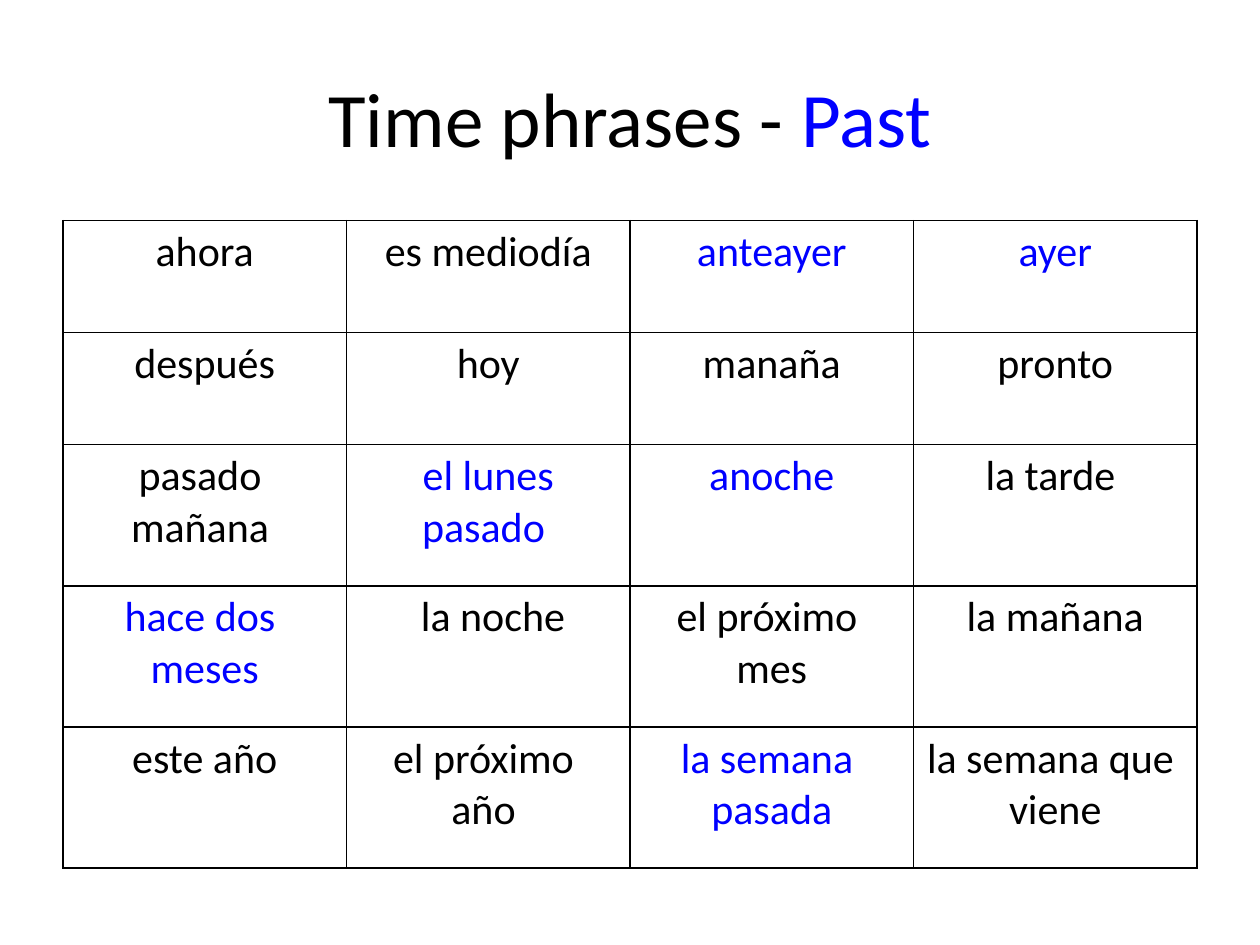
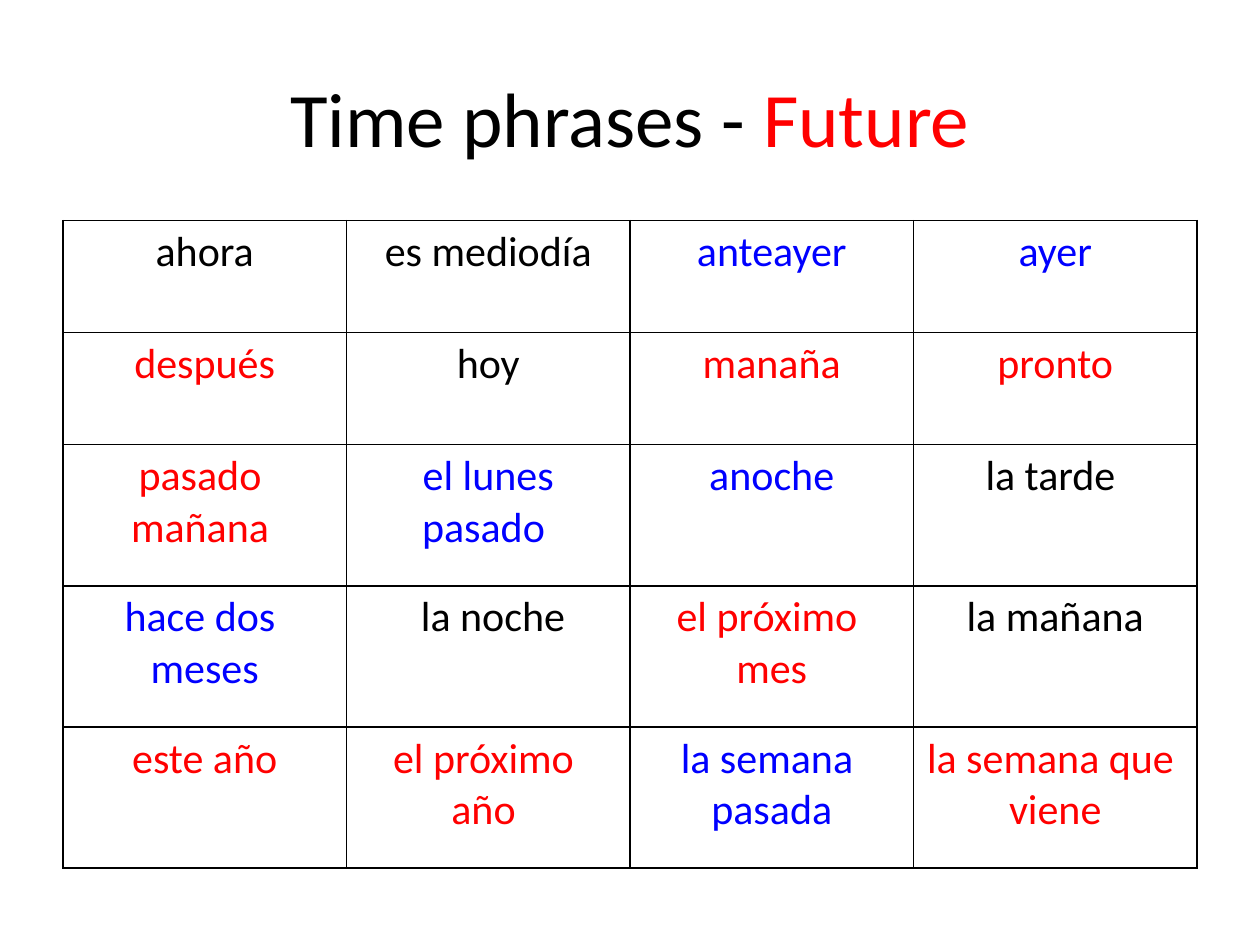
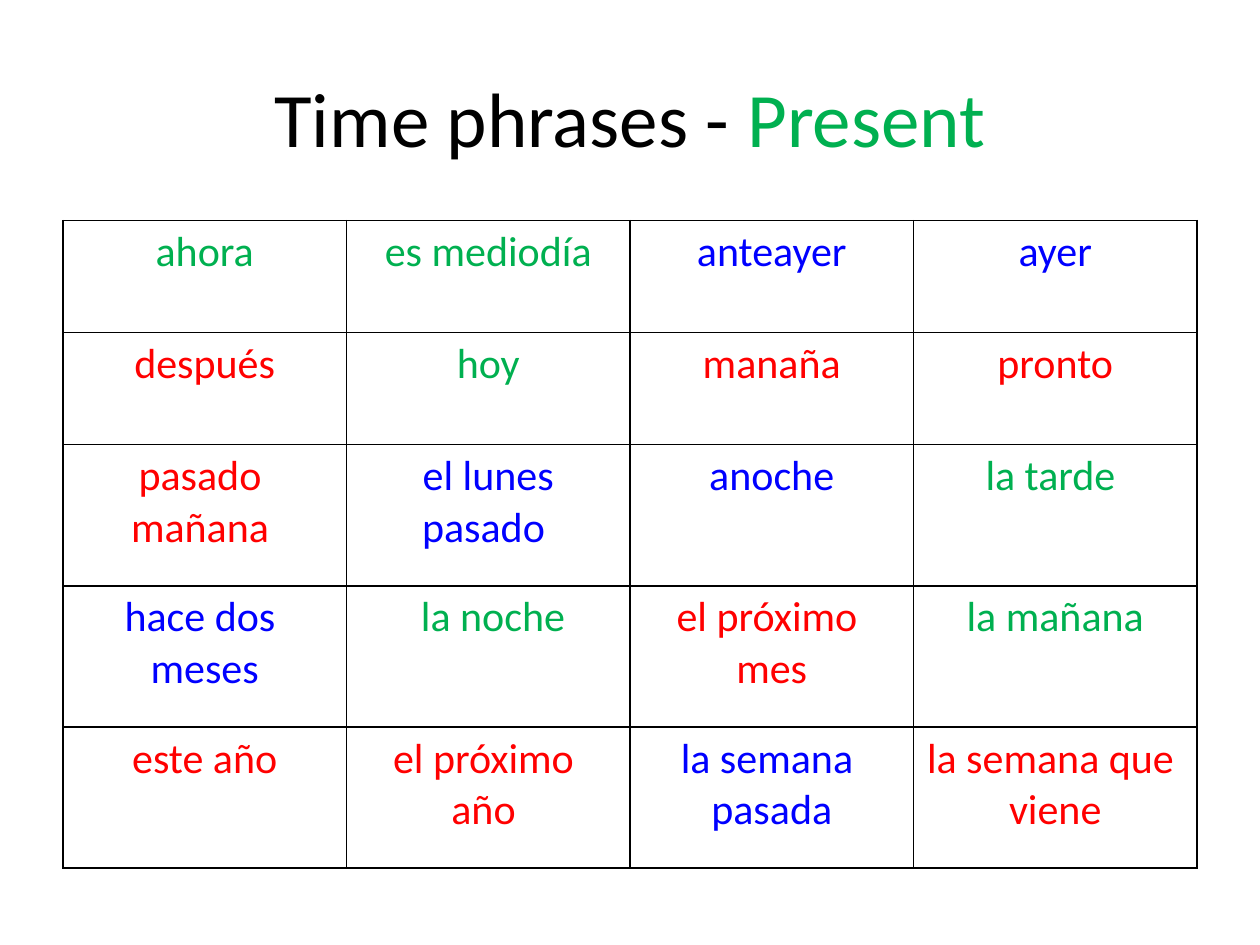
from lxml.etree import SubElement
from pptx import Presentation
from pptx.dml.color import RGBColor
from pptx.enum.text import MSO_ANCHOR, PP_ALIGN
from pptx.oxml.ns import qn
from pptx.util import Inches, Pt

BLACK = RGBColor(0x00, 0x00, 0x00)
BLUE = RGBColor(0x00, 0x00, 0xFF)
RED = RGBColor(0xFF, 0x00, 0x00)
GREEN = RGBColor(0x00, 0xB0, 0x50)
FONT = "Calibri"
NBSP = chr(160)

# Each slide colours one more tense, in this order.
TENSES = {"Past": BLUE, "Future": RED, "Present": GREEN}

# Each line of a phrase is a paragraph; its spaces do not break.
PHRASES = [
    [("ahora", "Present"), ("es mediodía", "Present"),
     ("anteayer", "Past"), ("ayer", "Past")],
    [("después", "Future"), ("hoy", "Present"),
     ("manaña", "Future"), ("pronto", "Future")],
    [("pasado \nmañana ", "Future"), (" el lunes \npasado ", "Past"),
     ("anoche", "Past"), ("la tarde ", "Present")],
    [("hace dos \nmeses", "Past"), (" la noche", "Present"),
     ("el próximo \nmes", "Future"), (" la mañana ", "Present")],
    [("este año", "Future"), ("el próximo \naño ", "Future"),
     ("la semana \npasada", "Past"), ("la semana que viene", "Future")],
]

MARGIN = 0.5
TITLE_TOP, TITLE_HEIGHT = 0.3, 1.25
TABLE_TOP = 1.75
ROW_HEIGHTS = [0.89, 0.89, 1.12, 1.12, 1.12]

prs = Presentation()
prs.slide_width, prs.slide_height = Inches(10), Inches(7.5)
LEFT = Inches(MARGIN)
WIDTH = prs.slide_width - 2 * LEFT


def style(p, size, color):
    p.alignment = PP_ALIGN.CENTER
    p.font.name, p.font.size = FONT, Pt(size)
    p.font.color.rgb = color


def add_title(slide, tense):
    box = slide.shapes.add_textbox(LEFT, Inches(TITLE_TOP), WIDTH, Inches(TITLE_HEIGHT))
    tf = box.text_frame
    tf.word_wrap = True
    tf.vertical_anchor = MSO_ANCHOR.MIDDLE
    p = tf.paragraphs[0]
    style(p, 44, BLACK)
    p.add_run().text = "Time phrases - "
    r = p.add_run()
    r.text = tense
    r.font.color.rgb = TENSES[tense]


def add_borders(cell):
    tc_pr = cell._tc.get_or_add_tcPr()
    for side in ("a:lnL", "a:lnR", "a:lnT", "a:lnB"):
        ln = SubElement(tc_pr, qn(side), w=str(Pt(1)))
        fill = SubElement(ln, qn("a:solidFill"))
        SubElement(fill, qn("a:srgbClr"), val=str(BLACK))


def add_phrase_table(slide, colored):
    """Add the phrase grid, colouring only the tenses in colored."""
    rows, cols = len(PHRASES), len(PHRASES[0])
    table = slide.shapes.add_table(rows, cols, LEFT, Inches(TABLE_TOP), WIDTH,
                                   Inches(sum(ROW_HEIGHTS))).table
    table.first_row = table.horz_banding = False
    for row, height in zip(table.rows, ROW_HEIGHTS):
        row.height = Inches(height)
    for i, phrases in enumerate(PHRASES):
        for j, (phrase, tense) in enumerate(phrases):
            cell = table.cell(i, j)
            add_borders(cell)
            cell.fill.background()
            cell.text = phrase.replace(" ", NBSP)
            for p in cell.text_frame.paragraphs:
                style(p, 24, TENSES[tense] if tense in colored else BLACK)


def main():
    colored = []
    for tense in TENSES:
        colored.append(tense)
        slide = prs.slides.add_slide(prs.slide_layouts[6])
        add_title(slide, tense)
        add_phrase_table(slide, colored)
    prs.save("out.pptx")


if __name__ == "__main__":
    main()
